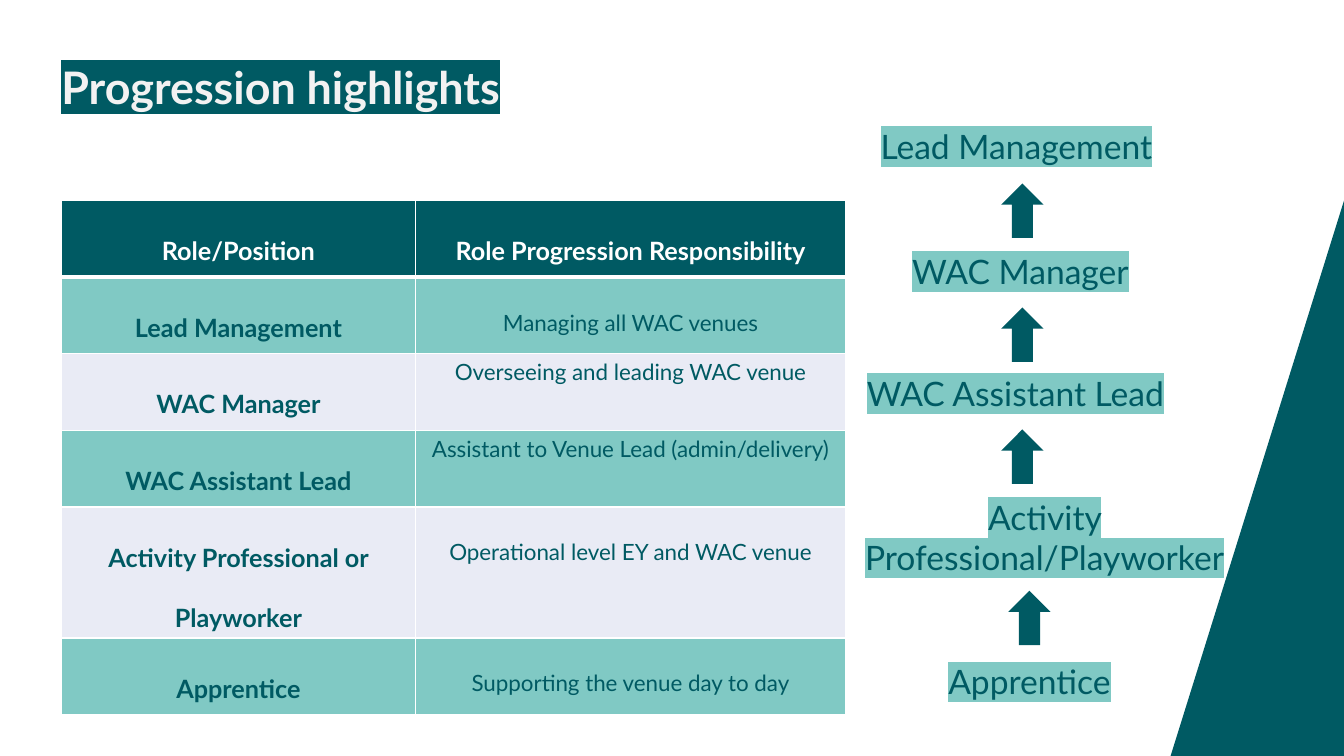
from lxml import etree
from pptx import Presentation
from pptx.dml.color import RGBColor
from pptx.enum.shapes import MSO_SHAPE
from pptx.enum.text import MSO_ANCHOR, PP_ALIGN
from pptx.oxml.ns import qn
from pptx.util import Inches, Pt

ARROW = MSO_SHAPE.RIGHT_ARROW
LEFT, MID = PP_ALIGN.LEFT, PP_ALIGN.CENTER
TOP, BOTTOM = MSO_ANCHOR.TOP, MSO_ANCHOR.BOTTOM
DARK, TEAL, PALE, WHITE, LIGHT = "005A63", "80C9C4", "E9EBF5", "FFFFFF", "F2F2F2"

ROLES = [
    ("Role/Position", "Role Progression Responsibility", 2),
    ("Lead Management", "Managing all WAC venues", 2),
    ("WAC Manager", "Overseeing and leading WAC venue", 1),
    ("WAC Assistant Lead", "Assistant to Venue Lead (admin/delivery)", 1),
    ("Activity Professional or Playworker", "Operational level EY and WAC venue", 2),
    ("Apprentice", "Supporting the venue day to day", 2),
]
STEPS = [
    ("Lead Management", (8.14, 1.2, 3.88, 0.5), MID),
    ("WAC Manager", (8.18, 2.44, 3.88, 0.5), MID),
    ("WAC Assistant Lead", (8.5, 3.65, 3.88, 0.5), LEFT),
    ("Activity Professional/Playworker", (8.27, 4.88, 4.18, 0.91), MID),
    ("Apprentice", (7.97, 6.51, 4.48, 0.5), MID),
]
ARROWS = [(9.87, 1.88), (9.87, 3.11), (9.87, 4.32), (9.94, 5.92)]


def rgb(code):
    return RGBColor.from_string(code)


class Deck:
    """Draws styled elements on the current slide."""

    def __init__(self, font):
        self.font = font
        self.file = Presentation()
        self.file.slide_width, self.file.slide_height = Inches(13.33), Inches(7.5)
        self.slide = self.file.slides.add_slide(self.file.slide_layouts[6])
        self.shapes = self.slide.shapes

    def words(self, frame, text, size, color, bold=False, align=MID, gap=None, mark=None):
        frame.text = text
        par = frame.paragraphs[0]
        par.alignment = align
        if gap:
            par.line_spacing = float(gap)
        run = par.runs[0]
        run.font.size, run.font.bold = Pt(size), bold
        run.font.color.rgb = rgb(color)
        if mark:
            high = etree.SubElement(run._r.get_or_add_rPr(), qn("a:highlight"))
            etree.SubElement(high, qn("a:srgbClr"), val=mark)
        run.font.name = self.font

    def label(self, text, spot, size, color, mark, anchor=TOP, **look):
        box = self.shapes.add_textbox(*map(Inches, spot))
        box.text_frame.word_wrap = True
        box.text_frame.vertical_anchor = anchor
        self.words(box.text_frame, text, size, color, mark=mark, **look)

    def paint(self, shape, color):
        shape.shadow.inherit = False
        shape.fill.solid()
        shape.fill.fore_color.rgb = rgb(color)
        shape.line.fill.background()

    def arrow(self, left, top, color):
        shape = self.shapes.add_shape(ARROW, *map(Inches, (left, top, 0.54, 0.42)))
        shape.rotation = 270
        self.paint(shape, color)

    def wedge(self, points, color):
        spots = [(Inches(x), Inches(y)) for x, y in points]
        form = self.shapes.build_freeform(*spots[0])
        form.add_line_segments(spots[1:], close=True)
        self.paint(form.convert_to_shape(), color)

    def edge(self, cell, side, width):
        line = etree.SubElement(cell._tc.get_or_add_tcPr(), qn("a:ln" + side), w=str(int(Pt(width))))
        fill = etree.SubElement(line, qn("a:solidFill"))
        etree.SubElement(fill, qn("a:srgbClr"), val=WHITE)

    def cell(self, cell, row, col, text, gap):
        for side in "LRTB":
            thick = (row, side) in ((0, "B"), (1, "T"))
            self.edge(cell, side, 3 if thick else 1)
        cell.fill.solid()
        cell.fill.fore_color.rgb = rgb(DARK if row == 0 else TEAL if row % 2 else PALE)
        bold = row == 0 or col == 0
        color = DARK if row else WHITE
        self.words(cell.text_frame, text, 18 if bold else 16, color, bold, gap=gap)

    def table(self, rows, left, top, widths, high):
        size = sum(widths), high * len(rows)
        grid = self.shapes.add_table(len(rows), len(widths), *map(Inches, (left, top, *size))).table
        for col, width in enumerate(widths):
            grid.columns[col].width = Inches(width)
        for row, (role, duty, gap) in enumerate(rows):
            grid.rows[row].height = Inches(high)
            self.cell(grid.cell(row, 0), row, 0, role, 2)
            self.cell(grid.cell(row, 1), row, 1, duty, gap)


def main():
    deck = Deck("Lato")
    deck.label("Progression highlights", (0.51, 0.55, 10, 0.63), 32, LIGHT, DARK,
               BOTTOM, bold=True, align=LEFT, gap=0.9)
    deck.wedge([(11.61, 7.5), (13.33, 1.99), (13.33, 7.5)], DARK)
    deck.table(ROLES, 0.61, 1.99, (3.51, 4.27), 0.76)
    for text, spot, align in STEPS:
        deck.label(text, spot, 24, DARK, TEAL, align=align)
    for left, top in ARROWS:
        deck.arrow(left, top, DARK)
    deck.file.save("out.pptx")


if __name__ == "__main__":
    main()
